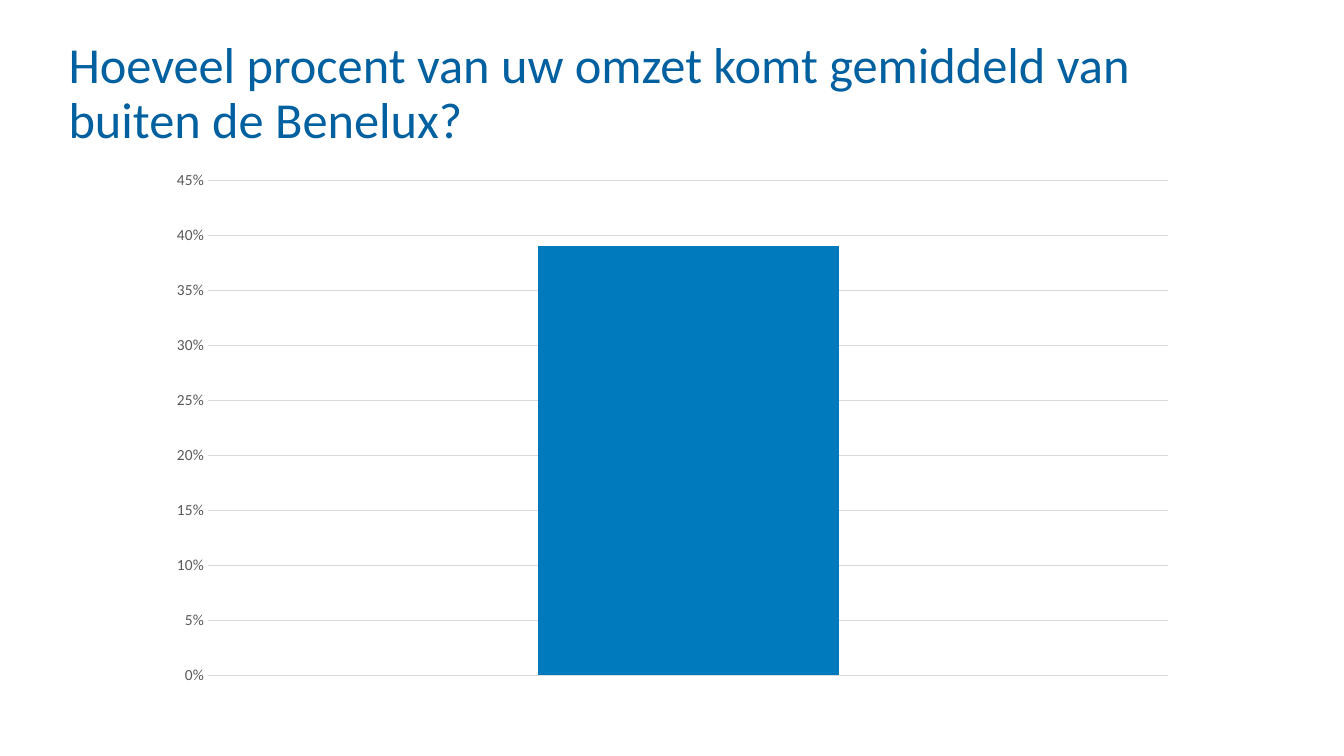
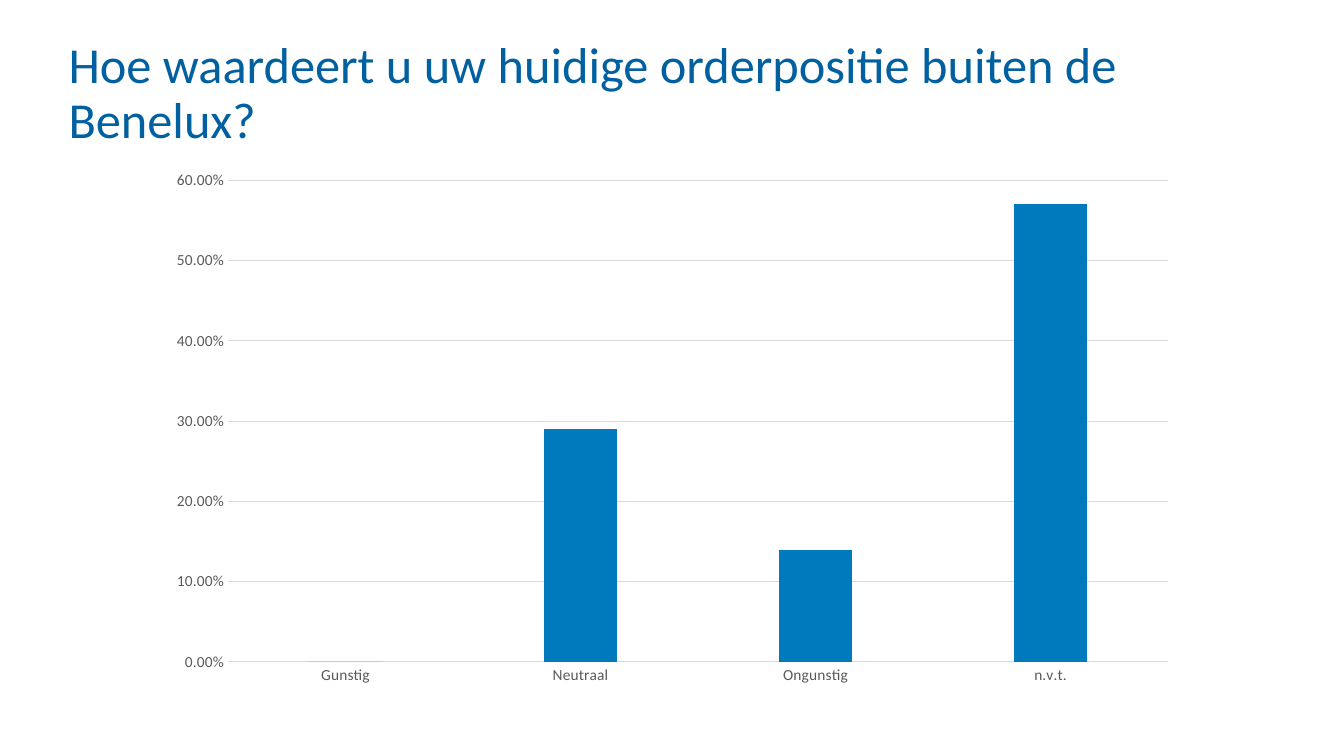
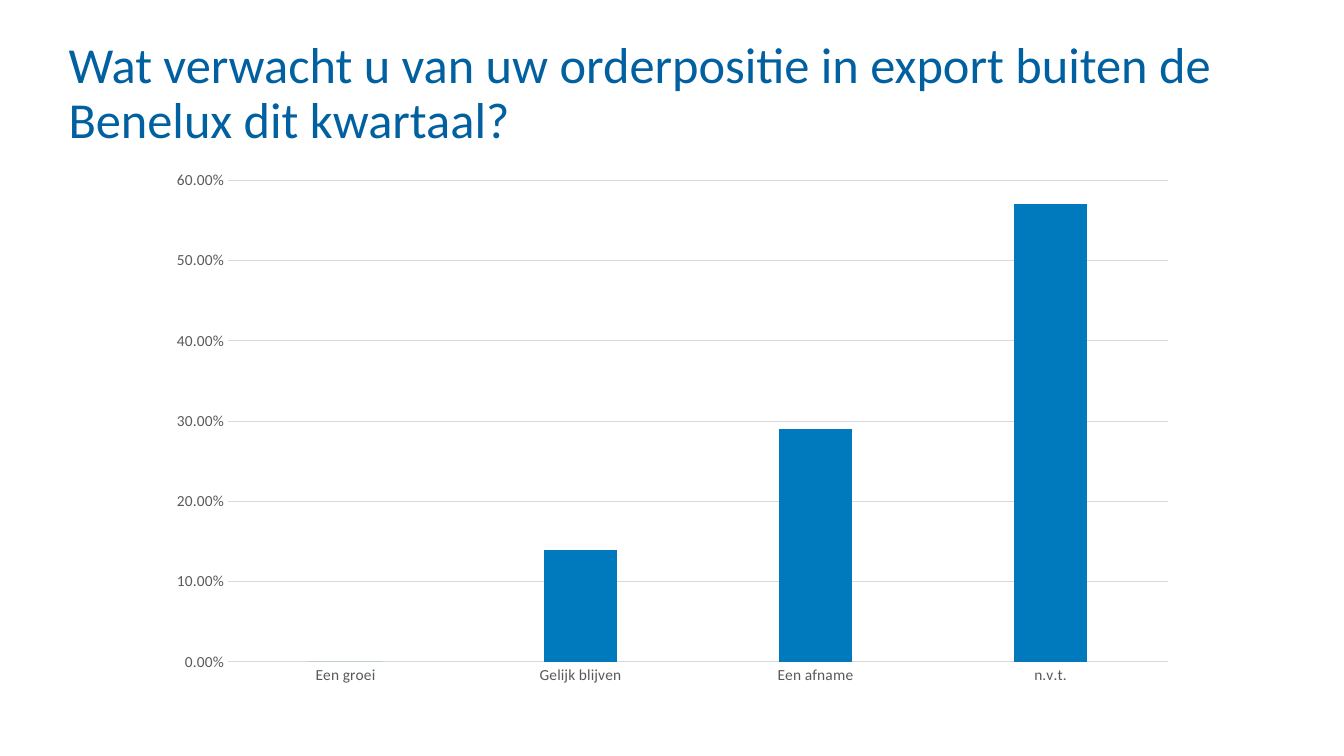
from dataclasses import dataclass

from pptx import Presentation
from pptx.chart.data import CategoryChartData
from pptx.dml.color import RGBColor
from pptx.enum.chart import XL_CHART_TYPE as ChartType, XL_TICK_MARK as TickMark
from pptx.enum.text import MSO_ANCHOR as Anchor
from pptx.util import Inches, Pt


@dataclass(frozen=True)
class Theme:
    font: str = "Calibri"
    title_color: RGBColor = RGBColor(0x00, 0x60, 0xA0)
    bar_color: RGBColor = RGBColor(0x00, 0x7A, 0xBD)
    label_color: RGBColor = RGBColor(0x59, 0x59, 0x59)
    grid_color: RGBColor = RGBColor(0xD9, 0xD9, 0xD9)
    title_size: int = 36
    label_size: int = 11
    grid_width: float = 0.75


THEME = Theme()

# Question, answers with their share, axis maximum, axis step, number format
QUESTIONS = [
    ("Hoeveel procent van uw omzet komt gemiddeld van buiten de Benelux?",
     {"1": 0.39}, 0.45, 0.05, "0%"),
    ("Hoe waardeert u uw huidige orderpositie buiten de Benelux?",
     {"Gunstig": 0, "Neutraal": 0.29, "Ongunstig": 0.14, "n.v.t.": 0.57},
     0.6, 0.1, "0.00%"),
    ("Wat verwacht u van uw orderpositie in export buiten de Benelux dit kwartaal?",
     {"Een groei": 0, "Gelijk blijven": 0.14, "Een afname": 0.29, "n.v.t.": 0.57},
     0.6, 0.1, "0.00%"),
]


def style_font(font, size, color):
    font.name = THEME.font
    font.size = Pt(size)
    font.color.rgb = color


def style_grid_line(line):
    line.color.rgb = THEME.grid_color
    line.width = Pt(THEME.grid_width)


def add_title(slide, question):
    title = slide.shapes.add_textbox(
        Inches(0.68), Inches(0.4), Inches(11.87), Inches(0.76))
    frame = title.text_frame
    frame.word_wrap = True
    frame.vertical_anchor = Anchor.TOP
    frame.margin_left = frame.margin_right = 0
    frame.margin_top = frame.margin_bottom = 0
    frame.text = question
    paragraph = frame.paragraphs[0]
    paragraph.line_spacing = 0.9
    style_font(paragraph.runs[0].font, THEME.title_size, THEME.title_color)


def style_axis(axis):
    axis.major_tick_mark = axis.minor_tick_mark = TickMark.NONE
    style_font(axis.tick_labels.font, THEME.label_size, THEME.label_color)


def add_answer_chart(slide, answers, maximum, step, number_format):
    data = CategoryChartData(number_format=number_format)
    data.categories = list(answers)
    data.add_series("Series 1", list(answers.values()))
    chart = slide.shapes.add_chart(
        ChartType.COLUMN_CLUSTERED, Inches(1.55), Inches(1.59),
        Inches(10.24), Inches(5.31), data).chart
    chart.has_title = False
    chart.has_legend = False
    style_font(chart.font, THEME.label_size, THEME.label_color)

    # Bars
    plot = chart.plots[0]
    plot.gap_width = 219
    plot.overlap = -27
    plot.vary_by_categories = False
    bars = plot.series[0].format
    bars.fill.solid()
    bars.fill.fore_color.rgb = THEME.bar_color
    bars.line.fill.background()

    # Axes: a single answer needs no category labels
    answer_axis, share_axis = chart.category_axis, chart.value_axis
    style_axis(answer_axis)
    style_grid_line(answer_axis.format.line)
    answer_axis.visible = len(answers) > 1
    style_axis(share_axis)
    share_axis.format.line.fill.background()
    share_axis.has_major_gridlines = True
    style_grid_line(share_axis.major_gridlines.format.line)
    share_axis.minimum_scale = 0
    share_axis.maximum_scale = maximum
    share_axis.major_unit = step
    share_axis.tick_labels.number_format = number_format
    share_axis.tick_labels.number_format_is_linked = False


def main():
    deck = Presentation()
    deck.slide_width, deck.slide_height = Inches(13.33), Inches(7.5)
    blank = deck.slide_layouts[6]
    for question, *answer_chart in QUESTIONS:
        slide = deck.slides.add_slide(blank)
        add_title(slide, question)
        add_answer_chart(slide, *answer_chart)
    deck.save("out.pptx")


if __name__ == "__main__":
    main()
